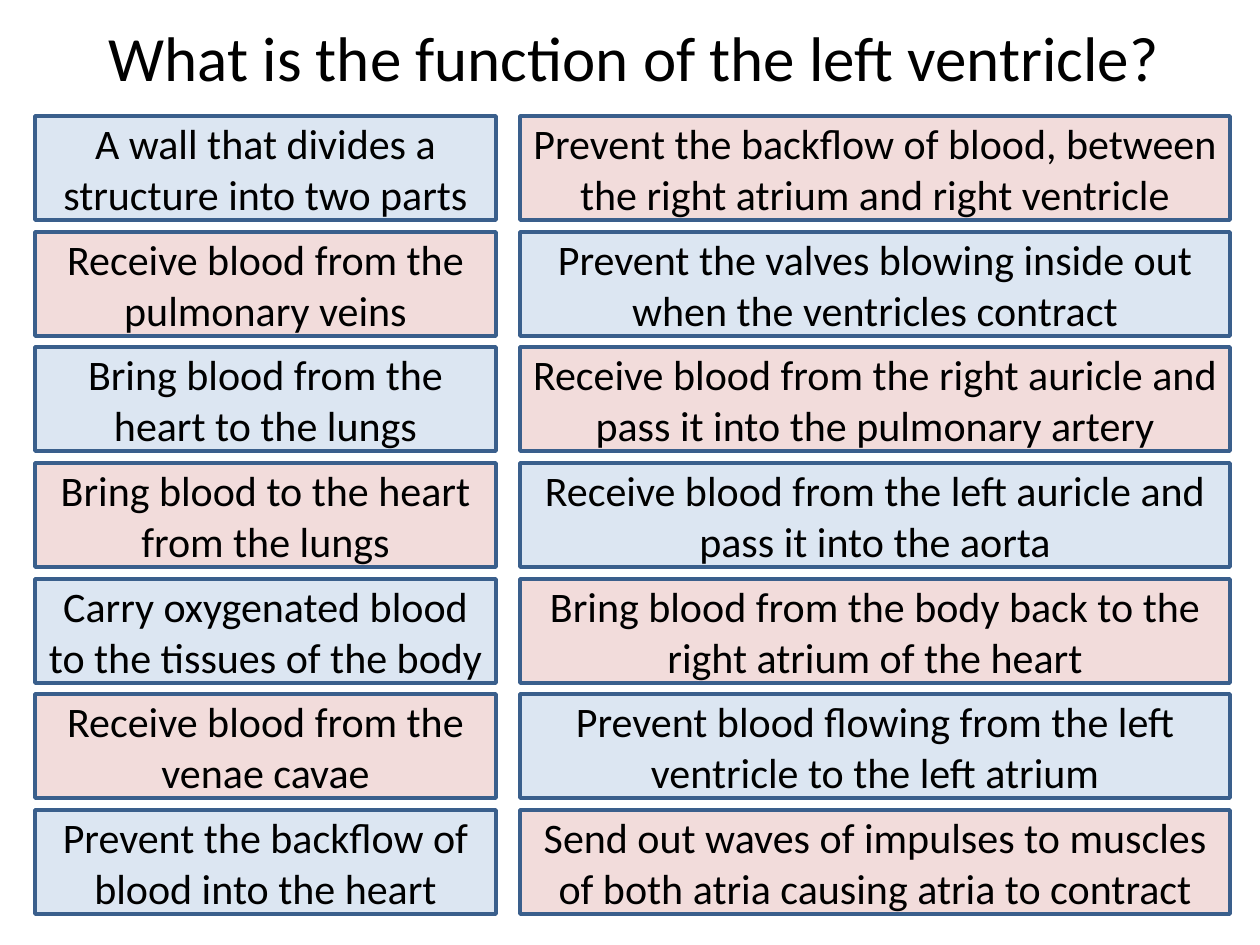
from dataclasses import dataclass

from pptx import Presentation
from pptx.dml.color import RGBColor
from pptx.enum.shapes import MSO_SHAPE as Shape
from pptx.enum.text import MSO_ANCHOR as Anchor, PP_ALIGN as Align
from pptx.slide import Slide
from pptx.text.text import TextFrame
from pptx.util import Emu, Pt

PX_PER_INCH = 126
TITLE_ONLY = 5


@dataclass(frozen=True)
class Theme:
    font: str = "Calibri"
    title_size: int = 36
    answer_size: int = 24
    line_width: int = 2
    text: RGBColor = RGBColor.from_string("000000")
    line: RGBColor = RGBColor.from_string("3A5F8C")
    blue: RGBColor = RGBColor.from_string("DCE6F2")
    pink: RGBColor = RGBColor.from_string("F2DCDB")


@dataclass(frozen=True)
class Box:
    left: int
    top: int
    width: int
    height: int

    def emu(self) -> list[Emu]:
        return [px(n) for n in (self.left, self.top, self.width, self.height)]


@dataclass(frozen=True)
class Column:
    left: int
    width: int
    answers: tuple[str, ...]


THEME = Theme()
QUESTION = "What is the function of the left ventricle?"
TITLE_BOX = Box(67, 6, 1134, 100)
FIRST_TOP, LAST_TOP, BUTTON_HEIGHT = 116, 810, 104
COLUMNS = (
    Column(35, 461, (
        "A wall that divides a structure into two parts",
        "Receive blood from the pulmonary veins",
        "Bring blood from the heart to the lungs",
        "Bring blood to the heart from the lungs",
        "Carry oxygenated blood to the tissues of the body",
        "Receive blood from the venae cavae",
        "Prevent the backflow of blood into the heart",
    )),
    Column(520, 710, (
        "Prevent the backflow of blood, between the right atrium and right ventricle",
        "Prevent the valves blowing inside out when the ventricles contract",
        "Receive blood from the right auricle and pass it into the pulmonary artery",
        "Receive blood from the left auricle and pass it into the aorta",
        "Bring blood from the body back to the right atrium of the heart",
        "Prevent blood flowing from the left ventricle to the left atrium",
        "Send out waves of impulses to muscles of both atria causing atria to contract",
    )),
)


def px(length: int) -> Emu:
    return Emu(round(length * 914400 / PX_PER_INCH))


def write_text(frame: TextFrame, text: str, size: int) -> None:
    frame.word_wrap = True
    frame.vertical_anchor = Anchor.MIDDLE
    paragraph = frame.paragraphs[0]
    paragraph.alignment = Align.CENTER
    run = paragraph.add_run()
    run.text = text
    run.font.name = THEME.font
    run.font.size = Pt(size)
    run.font.color.rgb = THEME.text


def add_title(slide: Slide, text: str) -> None:
    title = slide.shapes.title
    title.left, title.top, title.width, title.height = TITLE_BOX.emu()
    write_text(title.text_frame, text, THEME.title_size)


def add_answer(slide: Slide, box: Box, text: str, fill: RGBColor) -> None:
    button = slide.shapes.add_shape(Shape.ACTION_BUTTON_CUSTOM, *box.emu())
    button.shadow.inherit = False
    button.fill.solid()
    button.fill.fore_color.rgb = fill
    button.line.color.rgb = THEME.line
    button.line.width = Pt(THEME.line_width)
    write_text(button.text_frame, text, THEME.answer_size)


def add_column(slide: Slide, column: Column, fills: tuple[RGBColor, RGBColor]) -> None:
    """Stack the answers evenly, alternating the two fills."""
    pitch = (LAST_TOP - FIRST_TOP) / (len(column.answers) - 1)
    for row, answer in enumerate(column.answers):
        top = round(FIRST_TOP + row * pitch)
        box = Box(column.left, top, column.width, BUTTON_HEIGHT)
        add_answer(slide, box, answer, fills[row % 2])


def main() -> None:
    presentation = Presentation()
    presentation.slide_width = px(10 * PX_PER_INCH)
    presentation.slide_height = px(945)
    slide = presentation.slides.add_slide(presentation.slide_layouts[TITLE_ONLY])
    add_title(slide, QUESTION)
    left, right = COLUMNS
    add_column(slide, left, (THEME.blue, THEME.pink))
    add_column(slide, right, (THEME.pink, THEME.blue))
    presentation.save("out.pptx")


if __name__ == "__main__":
    main()
